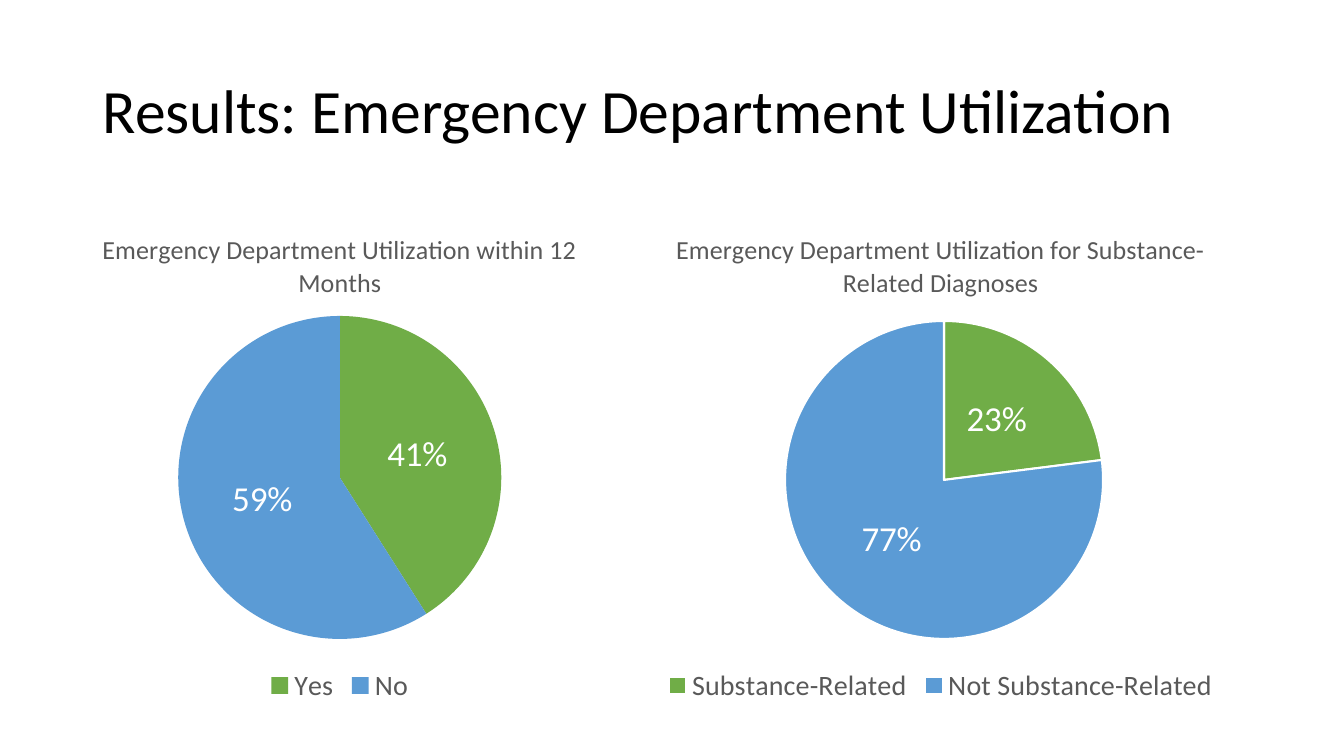
from dataclasses import dataclass

from lxml import etree
from pptx import Presentation
from pptx import util as u
from pptx.chart.data import CategoryChartData
from pptx.dml.color import RGBColor
from pptx.enum import chart as ch, text
from pptx.oxml.ns import qn

FONT = "Calibri"
GREEN, BLUE, GREY, WHITE, BLACK = "70AD47", "5B9BD5", "595959", "FFFFFF", "000000"


@dataclass
class Pie:
    title: str
    series: str
    categories: tuple[str, str]
    values: tuple[int, int]
    left: float
    plot: tuple[float, float, float, float]  # x, y, w, h as shares of the chart
    outlined: bool


PIES = [
    Pie("Emergency Department Utilization within 12 Months", "Series 1",
        ("Yes", "No"), (41, 59), 0, (0.26, 0.21, 0.48, 0.65), False),
    Pie("Emergency Department Utilization for Substance-Related Diagnoses",
        "Emergency Department Utilization for Substance-Related Diagnoses",
        ("Substance-Related", "Not Substance-Related"), (23, 77), 5.96,
        (0.27, 0.22, 0.47, 0.64), True),
]


def rgb(color: str) -> RGBColor:
    return RGBColor.from_string(color)


def set_font(font, size: float, color: str) -> None:
    font.name, font.size, font.bold = FONT, u.Pt(size), False
    font.color.rgb = rgb(color)


def set_plot_layout(chart, plot: tuple[float, float, float, float]) -> None:
    area = chart._chartSpace.chart.plotArea
    for old in area.findall(qn("c:layout")):
        area.remove(old)
    layout = etree.Element(qn("c:layout"))
    manual = etree.SubElement(layout, qn("c:manualLayout"))
    settings = [("layoutTarget", "inner"), ("xMode", "edge"), ("yMode", "edge"),
                *zip("xywh", plot)]
    for tag, value in settings:
        etree.SubElement(manual, qn(f"c:{tag}")).set("val", str(value))
    area.insert(0, layout)


def add_title(s, title: str) -> None:
    box = s.shapes.add_textbox(u.Inches(0.92), u.Inches(0.4), u.Inches(11.5), u.Inches(1.45))
    tf = box.text_frame
    tf.word_wrap = True
    tf.vertical_anchor = text.MSO_ANCHOR.MIDDLE
    p = tf.paragraphs[0]
    p.text = title
    p.line_spacing = 0.9
    set_font(p.font, 44, BLACK)


def add_pie(s, pie: Pie) -> None:
    data = CategoryChartData()
    data.categories = pie.categories
    data.add_series(pie.series, pie.values)
    chart = s.shapes.add_chart(
        ch.XL_CHART_TYPE.PIE, u.Inches(pie.left), u.Inches(2.1),
        u.Inches(6.74), u.Inches(4.93), data).chart
    set_font(chart.font, 10, BLACK)
    set_plot_layout(chart, pie.plot)

    chart.has_title = True
    p = chart.chart_title.text_frame.paragraphs[0]
    p.text = pie.title
    set_font(p.font, 18.6, GREY)
    chart.chart_title.include_in_layout = False

    chart.has_legend = True
    chart.legend.position = ch.XL_LEGEND_POSITION.BOTTOM
    chart.legend.include_in_layout = False
    set_font(chart.legend.font, 20, GREY)

    plot = chart.plots[0]
    plot.vary_by_categories = True
    for i, color in enumerate((GREEN, BLUE)):
        form = plot.series[0].points[i].format
        form.fill.solid()
        form.fill.fore_color.rgb = rgb(color)
        if pie.outlined:
            form.line.color.rgb = rgb(WHITE)
            form.line.width = u.Pt(1.5)
        else:
            form.line.fill.background()

    labels = plot.series[0].data_labels
    labels.show_percentage = True
    labels.show_value = False
    labels.number_format, labels.number_format_is_linked = "0%", False
    labels.position = ch.XL_LABEL_POSITION.CENTER
    set_font(labels.font, 25, WHITE)


def main() -> None:
    prs = Presentation()
    prs.slide_width, prs.slide_height = u.Inches(13.33), u.Inches(7.5)
    s = prs.slides.add_slide(prs.slide_layouts[6])
    add_title(s, "Results: Emergency Department Utilization")
    for pie in PIES:
        add_pie(s, pie)
    prs.save("out.pptx")


if __name__ == "__main__":
    main()
